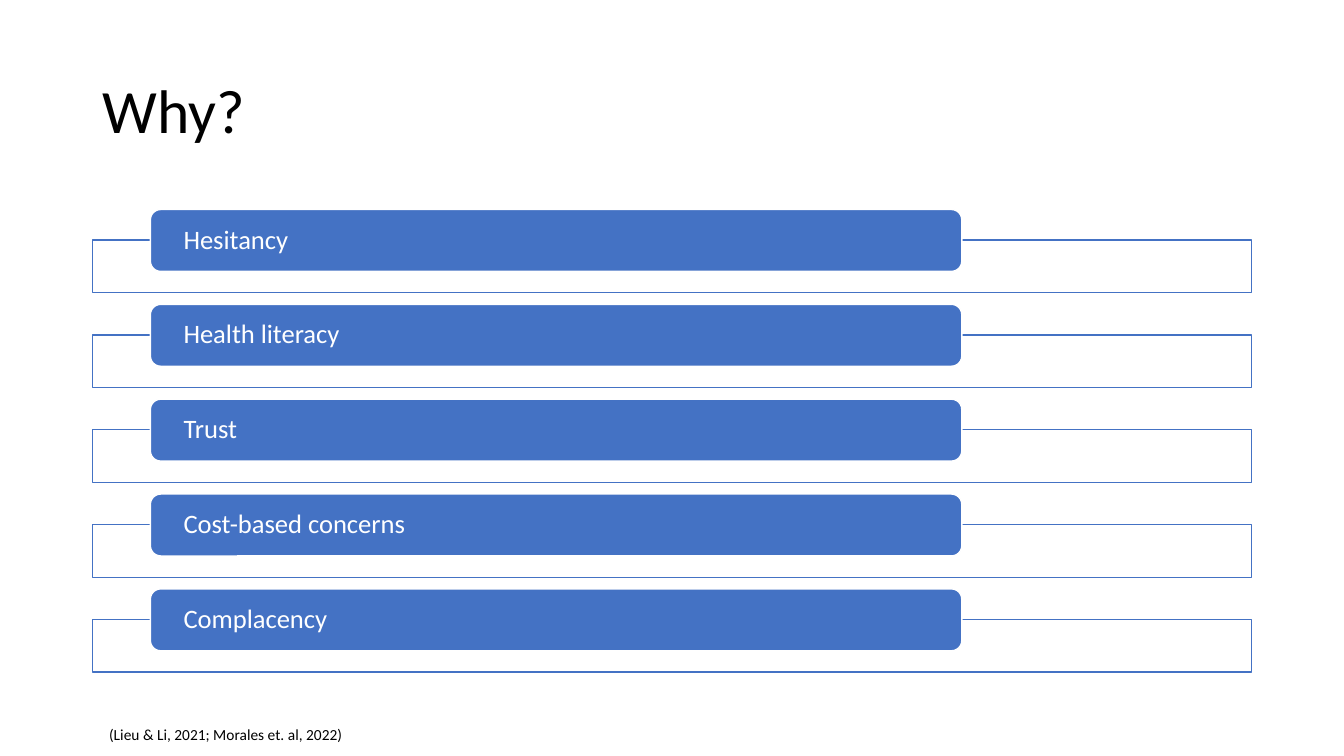
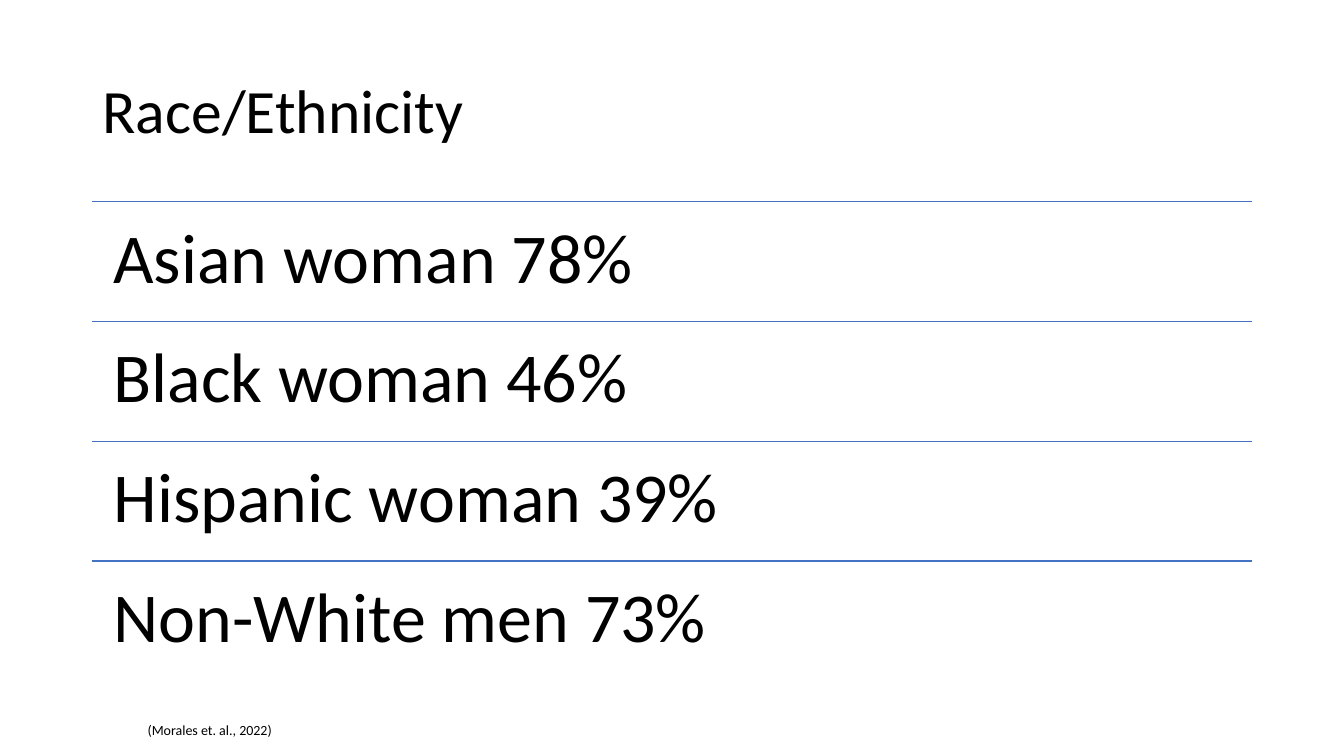
import pptx
import pptx.util
import pptx.dml.color
import pptx.enum.shapes
import pptx.enum.text
import lxml.etree

Cm = pptx.util.Cm
Pt = pptx.util.Pt
Shape = pptx.enum.shapes.MSO_SHAPE
Anchor = pptx.enum.text.MSO_ANCHOR

# Shared style
FONT = "Calibri"
BLUE, WHITE, BLACK = "4472C4", "FFFFFF", "000000"
LEFT, WIDTH = 2.33, 29.21

REASONS = ["Hesitancy", "Health literacy", "Trust",
           "Cost-based concerns", "Complacency"]
RATES = ["Asian woman 78%", "Black woman 46%",
         "Hispanic woman 39%", "Non-White men 73%"]


def paint(item, color):
    """Set a fill, line or font colour from a hex string."""
    rgb = pptx.dml.color.RGBColor.from_string(color)
    if hasattr(item, "solid"):
        item.solid()
        item.fore_color.rgb = rgb
    else:
        item.color.rgb = rgb


def write(shape, text, size, color=BLACK, anchor=Anchor.TOP, space=0.9):
    frame = shape.text_frame
    frame.text = text
    frame.vertical_anchor = anchor
    para = frame.paragraphs[0]
    para.alignment = pptx.enum.text.PP_ALIGN.LEFT
    para.line_spacing = space
    font = para.runs[0].font
    font.name, font.size = FONT, Pt(size)
    paint(font, color)
    return frame


def pad(frame, side, ends):
    frame.margin_left = frame.margin_right = Cm(side)
    frame.margin_top = frame.margin_bottom = Cm(ends)


def add_page(deck, title):
    page = deck.slides.add_slide(deck.slide_layouts[5])
    head = page.shapes.title
    head.left, head.top = Cm(LEFT), Cm(1.01)
    head.width, head.height = Cm(WIDTH), Cm(3.68)
    write(head, title, 44, anchor=Anchor.MIDDLE)
    return page


def add_box(page, kind, left, top, width, height, fill, edge):
    box = page.shapes.add_shape(kind, Cm(left), Cm(top),
                                Cm(width), Cm(height))
    box.shadow.inherit = False
    paint(box.fill, fill)
    paint(box.line, edge)
    box.line.width = Pt(1)
    return box


def add_rule(page, top):
    rule = page.shapes.add_connector(
        pptx.enum.shapes.MSO_CONNECTOR.STRAIGHT,
        Cm(LEFT), Cm(top), Cm(LEFT + WIDTH), Cm(top))
    paint(rule.line, BLUE)
    rule.line.width = Pt(1)
    lxml.etree.SubElement(rule._element.spPr,
                          pptx.oxml.ns.qn("a:effectLst"))


def add_text(page, text, size, left, top, width, height, space=0.9):
    box = page.shapes.add_textbox(Cm(left), Cm(top), Cm(width), Cm(height))
    return write(box, text, size, space=space)


def add_source(page, text, size, left, top, width, height):
    frame = add_text(page, text, size, left, top, width, height, space=1.0)
    frame.word_wrap = False
    frame.auto_size = pptx.enum.text.MSO_AUTO_SIZE.SHAPE_TO_FIT_TEXT


def add_bars(page, labels, top=5.28, step=2.39):
    """Draw labelled bars, each on the top edge of a wide frame."""
    for i, label in enumerate(labels):
        y = top + i * step
        add_box(page, Shape.RECTANGLE, LEFT, y + 0.77, WIDTH, 1.33,
                WHITE, BLUE)
        bar = add_box(page, Shape.ROUNDED_RECTANGLE, 3.79, y, 20.45, 1.56,
                      BLUE, WHITE)
        pad(write(bar, label, 19, WHITE, Anchor.MIDDLE), 0.76, 0)


def add_rows(page, labels, top=5.08, step=3.02):
    """Draw large text rows, each under a thin rule."""
    for i, label in enumerate(labels):
        y = top + i * step
        add_rule(page, y)
        frame = add_text(page, label, 50, LEFT, y, WIDTH, step)
        frame.word_wrap = True
        pad(frame, 0.53, 0.53)


def main():
    deck = pptx.Presentation()
    deck.slide_width, deck.slide_height = Cm(33.87), Cm(19.05)

    # Reasons
    page = add_page(deck, "Why?")
    add_bars(page, REASONS)
    add_source(page, "(Lieu & Li, 2021; Morales et. al, 2022)", 11,
               2.5, 18.16, 6.45, 0.73)

    # Rates by group
    page = add_page(deck, "Race/Ethnicity")
    add_rows(page, RATES)
    add_source(page, "(Morales et. al., 2022)", 10, 3.47, 18.05, 3.68, 0.68)

    deck.save("out.pptx")


if __name__ == "__main__":
    main()
